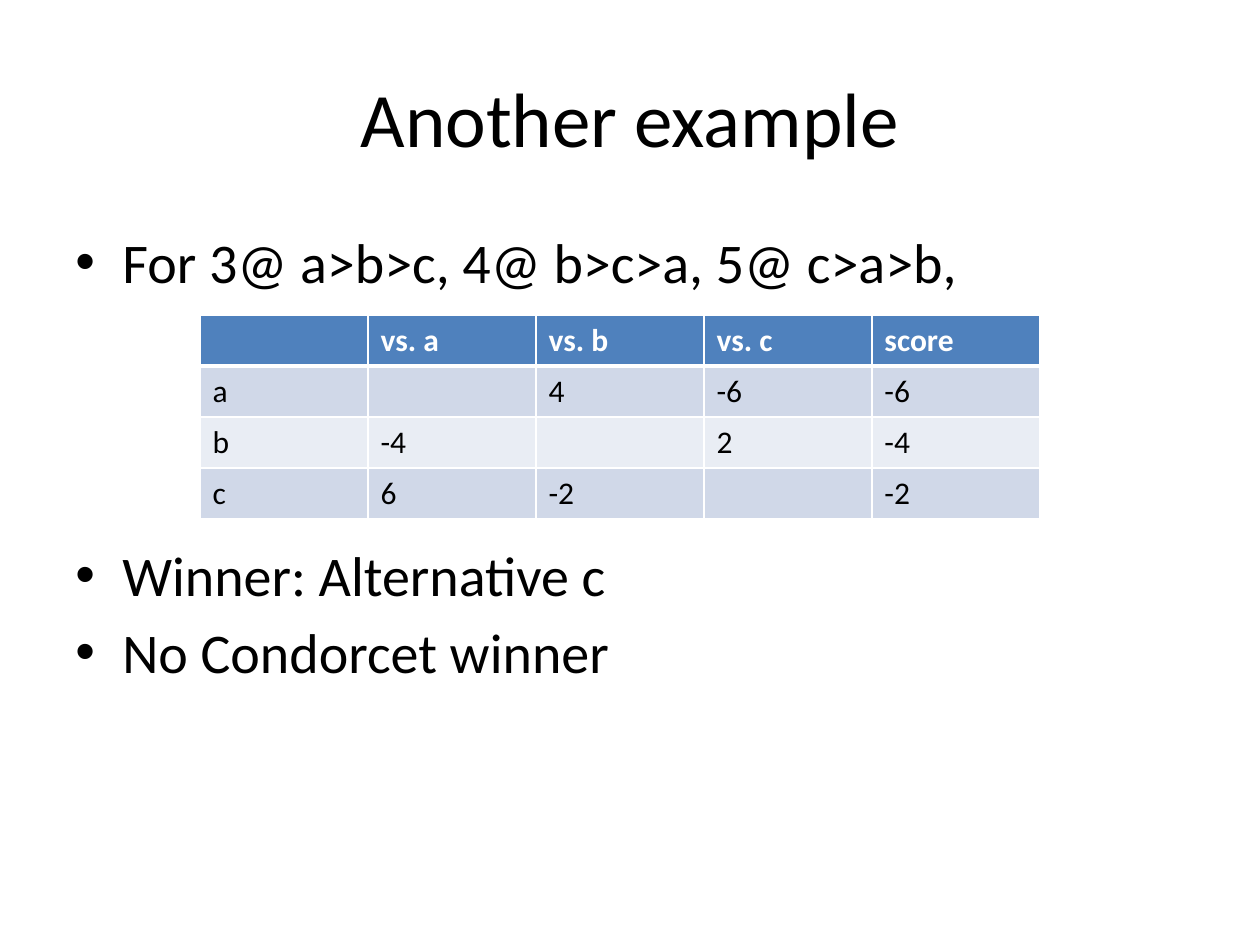
import dataclasses

import lxml.etree
import pptx
import pptx.dml.color
import pptx.enum.text
import pptx.oxml.ns
import pptx.util

PX = 914400 / 126


@dataclasses.dataclass(frozen=True)
class Theme:
    font: str = "Calibri"
    bullet_font: str = "Arial"
    ink: str = "000000"
    white: str = "FFFFFF"
    header: str = "4F81BD"
    bands: tuple = ("D0D8E8", "E9EDF4")
    title_size: int = 44
    body_size: int = 32
    cell_size: int = 18
    rule: int = 1
    header_rule: int = 3


THEME = Theme()

TITLE = "Another example"
# Each bullet with the space before it, in points; the second clears the table.
BULLETS = [
    ("For 3@ a>b>c, 4@ b>c>a, 5@ c>a>b,", 0),
    ("Winner: Alternative c", 140.4),
    ("No Condorcet winner", 5.8),
]
SCORES = [
    ["", "vs. a", "vs. b", "vs. c", "score"],
    ["a", "", "4", "-6", "-6"],
    ["b", "-4", "", "2", "-4"],
    ["c", "6", "-2", "", "-2"],
]


def emu(px):
    return pptx.util.Emu(round(px * PX))


def rgb(value):
    return pptx.dml.color.RGBColor.from_string(value)


def style(para, size, color, bold=False):
    para.font.name = THEME.font
    para.font.size = pptx.util.Pt(size)
    para.font.bold = bold
    para.font.color.rgb = rgb(color)


def add_child(parent, tag, **attributes):
    return lxml.etree.SubElement(parent, pptx.oxml.ns.qn(tag), attributes)


def add_bullet(para, indent):
    properties = para._p.get_or_add_pPr()
    properties.set("marL", str(emu(indent)))
    properties.set("indent", str(-emu(indent)))
    add_child(properties, "a:buFont", typeface=THEME.bullet_font)
    add_child(properties, "a:buChar", char="•")


def add_borders(cell, top, bottom):
    """Draw white borders; top and bottom are widths in points."""
    properties = cell._tc.get_or_add_tcPr()
    widths = {"a:lnL": THEME.rule, "a:lnR": THEME.rule, "a:lnT": top, "a:lnB": bottom}
    for tag, width in widths.items():
        line = add_child(properties, tag, w=str(pptx.util.Pt(width)))
        add_child(add_child(line, "a:solidFill"), "a:srgbClr", val=THEME.white)


def place_title(page, left, top, width, height):
    title = page.shapes.title
    title.left, title.top = emu(left), emu(top)
    title.width, title.height = emu(width), emu(height)
    title.text_frame.text = TITLE
    title.text_frame.vertical_anchor = pptx.enum.text.MSO_ANCHOR.MIDDLE
    para = title.text_frame.paragraphs[0]
    para.alignment = pptx.enum.text.PP_ALIGN.CENTER
    style(para, THEME.title_size, THEME.ink)


def place_bullets(page, left, top, width, height):
    box = page.shapes.add_textbox(emu(left), emu(top), emu(width), emu(height))
    frame = box.text_frame
    frame.word_wrap = True
    frame.text = "\n".join(text for text, _ in BULLETS)
    for para, (_, space) in zip(frame.paragraphs, BULLETS):
        para.space_before = pptx.util.Pt(space)
        add_bullet(para, indent=47)
        style(para, THEME.body_size, THEME.ink)


def place_scores(page, left, top, width, height):
    table = page.shapes.add_table(
        len(SCORES), len(SCORES[0]), emu(left), emu(top), emu(width), emu(height)
    ).table
    for row, values in enumerate(SCORES):
        is_header = row == 0
        fill = THEME.header if is_header else THEME.bands[(row - 1) % 2]
        for column, value in enumerate(values):
            cell = table.cell(row, column)
            cell.text = value
            style(
                cell.text_frame.paragraphs[0],
                THEME.cell_size,
                THEME.white if is_header else THEME.ink,
                bold=is_header,
            )
            add_borders(
                cell,
                top=THEME.header_rule if row == 1 else THEME.rule,
                bottom=THEME.header_rule if is_header else THEME.rule,
            )
            cell.fill.solid()
            cell.fill.fore_color.rgb = rgb(fill)


def main():
    deck = pptx.Presentation()
    deck.slide_width, deck.slide_height = emu(1260), emu(945)
    page = deck.slides.add_slide(deck.slide_layouts.get_by_name("Title Only"))
    place_title(page, 63, 38, 1134, 157)
    place_bullets(page, 63, 221, 1134, 624)
    place_scores(page, 200, 315, 840, 204)
    deck.save("out.pptx")


if __name__ == "__main__":
    main()
